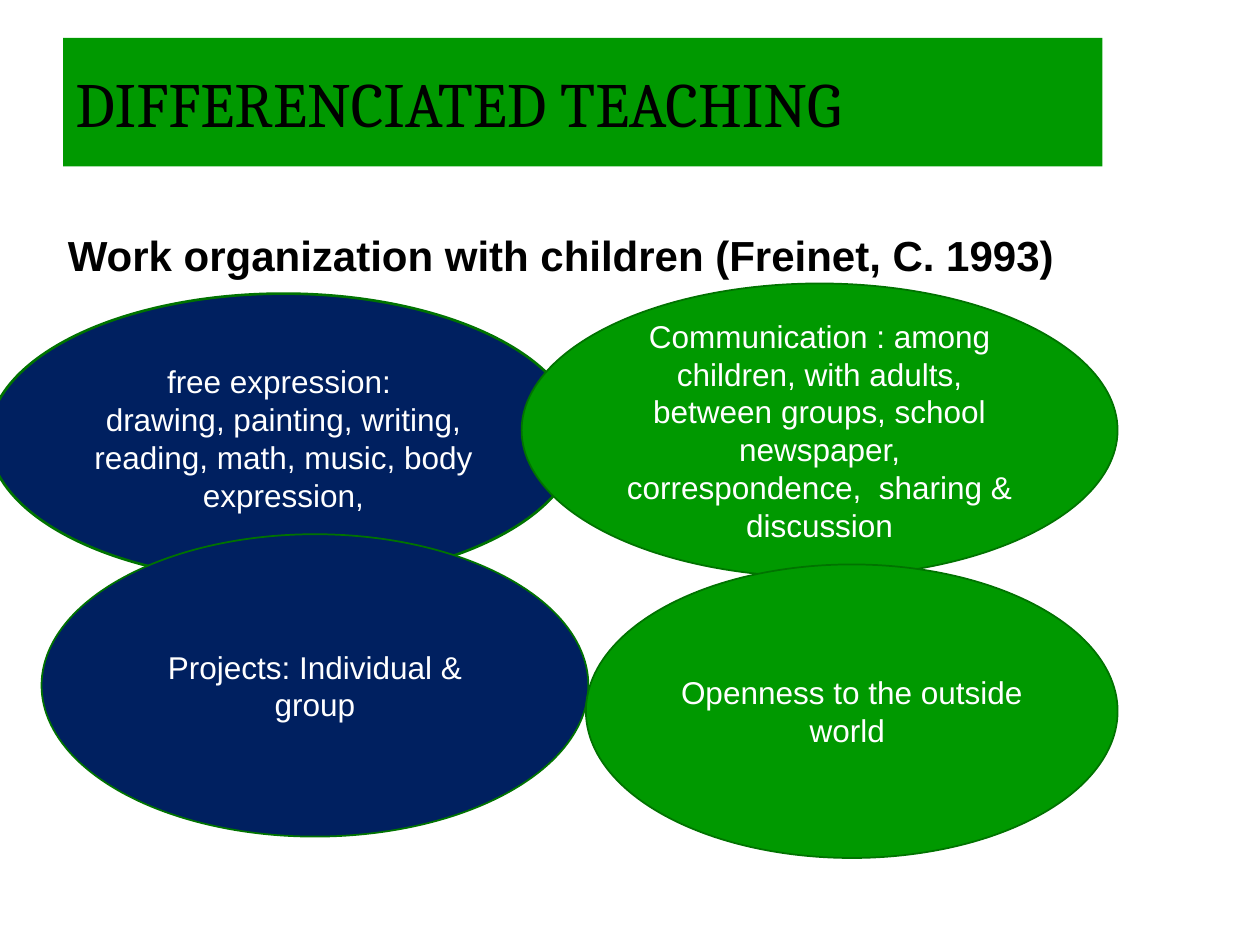
from dataclasses import dataclass

from pptx import Presentation
from pptx.dml.color import RGBColor
from pptx.enum.shapes import MSO_SHAPE as Shape
from pptx.enum.text import MSO_ANCHOR as Anchor, PP_ALIGN as Align
from pptx.util import Inches, Pt


@dataclass(frozen=True)
class Theme:
    green: str = "009900"
    navy: str = "002060"
    outline: str = "007300"
    black: str = "000000"
    white: str = "FFFFFF"
    title_font: str = "Cambria"
    body_font: str = "Arial"
    title_size: int = 36
    heading_size: int = 24
    body_size: int = 18


THEME = Theme()
SLIDE_WIDTH, SLIDE_HEIGHT = Inches(10), Inches(7.5)
COLUMNS, ROWS = 100, 75

# Regions: left column, top row, columns wide, rows high
TITLE_BOX = (5, 3, 82.5, 10.2)
HEADING_BOX = (4.4, 13.9, 83.1, 8.8)
IDEAS_BOX = (-0.9, 22.5, 89.6, 45.6)

# Ellipses, back to front: box within the region, fill, line width, paragraphs
IDEAS = [
    ((0, 0.8, 46.8, 22.9), THEME.navy, 1.5,
     ["free expression: ",
      "drawing, painting, writing, reading, math, music, body expression,"]),
    ((4.2, 19.9, 43.4, 24), THEME.navy, 1, ["Projects: Individual & group"]),
    ((42.3, 0, 47.3, 23.3), THEME.green, 1,
     ["Communication : among children, with adults, between groups, "
      "school newspaper, correspondence,  sharing & discussion"]),
    ((47.4, 22.3, 42.2, 23.3), THEME.green, 1,
     ["Openness to the outside world "]),
]


def place(box):
    """Turn a box in columns and rows into slide lengths."""
    left, top, width, height = box
    column, row = SLIDE_WIDTH / COLUMNS, SLIDE_HEIGHT / ROWS
    return (round(left * column), round(top * row),
            round(width * column), round(height * row))


def write(shape, lines, font, size, color, bold=False,
          align=Align.LEFT, anchor=Anchor.MIDDLE):
    frame = shape.text_frame
    frame.word_wrap = True
    frame.vertical_anchor = anchor
    frame.text = "\n".join(lines)
    for paragraph in frame.paragraphs:
        paragraph.alignment = align
        paragraph.font.name = font
        paragraph.font.size = Pt(size)
        paragraph.font.bold = bold
        paragraph.font.color.rgb = RGBColor.from_string(color)


def add_filled(slide, kind, box, fill):
    shape = slide.shapes.add_shape(kind, *place(box))
    shape.shadow.inherit = False
    shape.fill.solid()
    shape.fill.fore_color.rgb = RGBColor.from_string(fill)
    return shape


def add_title(slide, box):
    banner = add_filled(slide, Shape.RECTANGLE, box, THEME.green)
    banner.line.fill.background()
    write(banner, ["DIFFERENCIATED TEACHING"],
          THEME.title_font, THEME.title_size, THEME.black)


def add_heading(slide, box):
    heading = slide.shapes.add_textbox(*place(box))
    write(heading, ["Work organization with children (Freinet, C. 1993)"],
          THEME.body_font, THEME.heading_size, THEME.black,
          bold=True, anchor=Anchor.BOTTOM)


def add_ideas(slide, box):
    left, top = box[:2]
    for (column, row, width, height), fill, line_width, lines in IDEAS:
        ellipse = add_filled(slide, Shape.OVAL,
                             (left + column, top + row, width, height), fill)
        ellipse.line.color.rgb = RGBColor.from_string(THEME.outline)
        ellipse.line.width = Pt(line_width)
        write(ellipse, lines, THEME.body_font, THEME.body_size,
              THEME.white, align=Align.CENTER)


def main():
    presentation = Presentation()
    presentation.slide_width = SLIDE_WIDTH
    presentation.slide_height = SLIDE_HEIGHT
    slide = presentation.slides.add_slide(presentation.slide_layouts[6])
    add_title(slide, TITLE_BOX)
    add_heading(slide, HEADING_BOX)
    add_ideas(slide, IDEAS_BOX)
    presentation.save("out.pptx")


if __name__ == "__main__":
    main()
